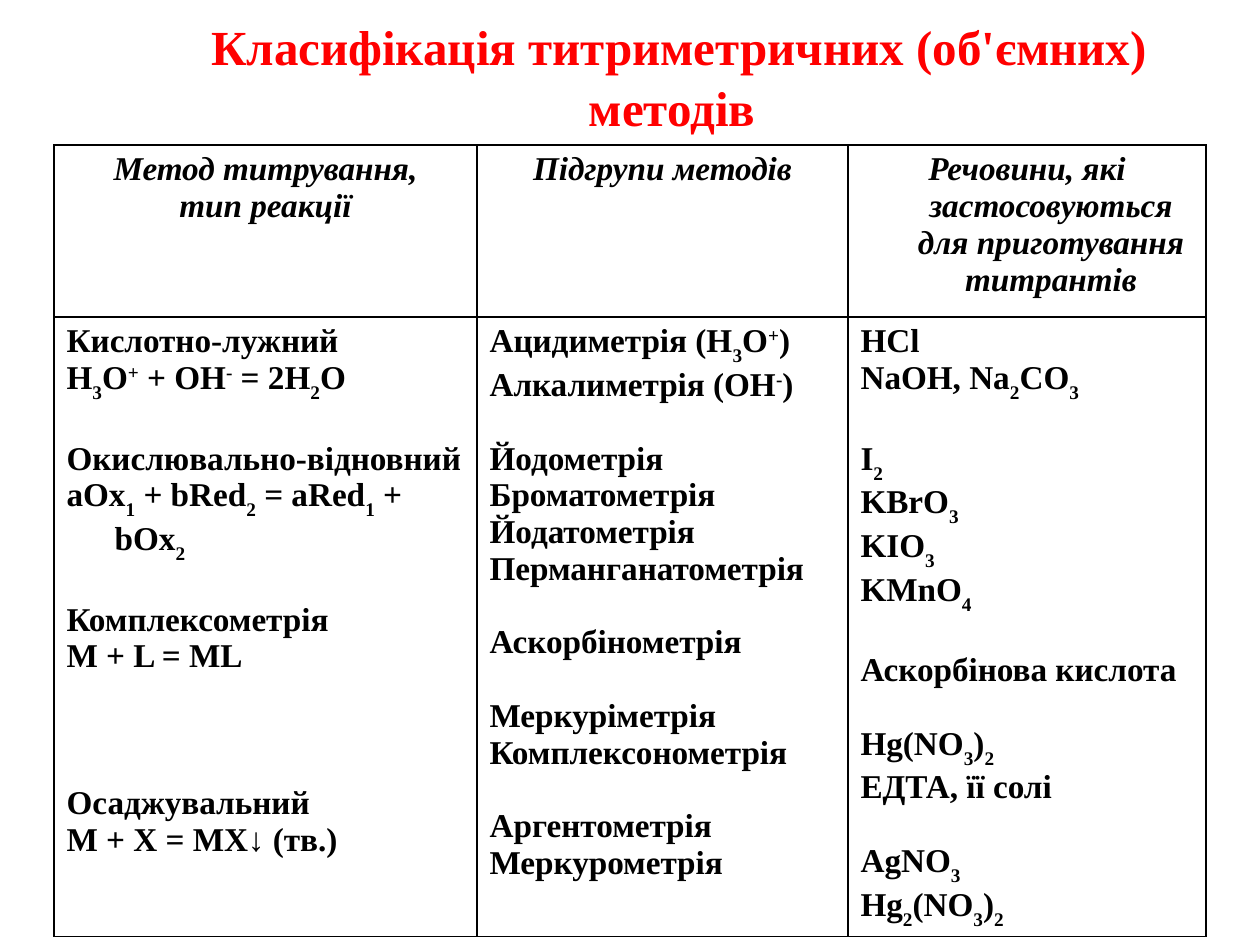
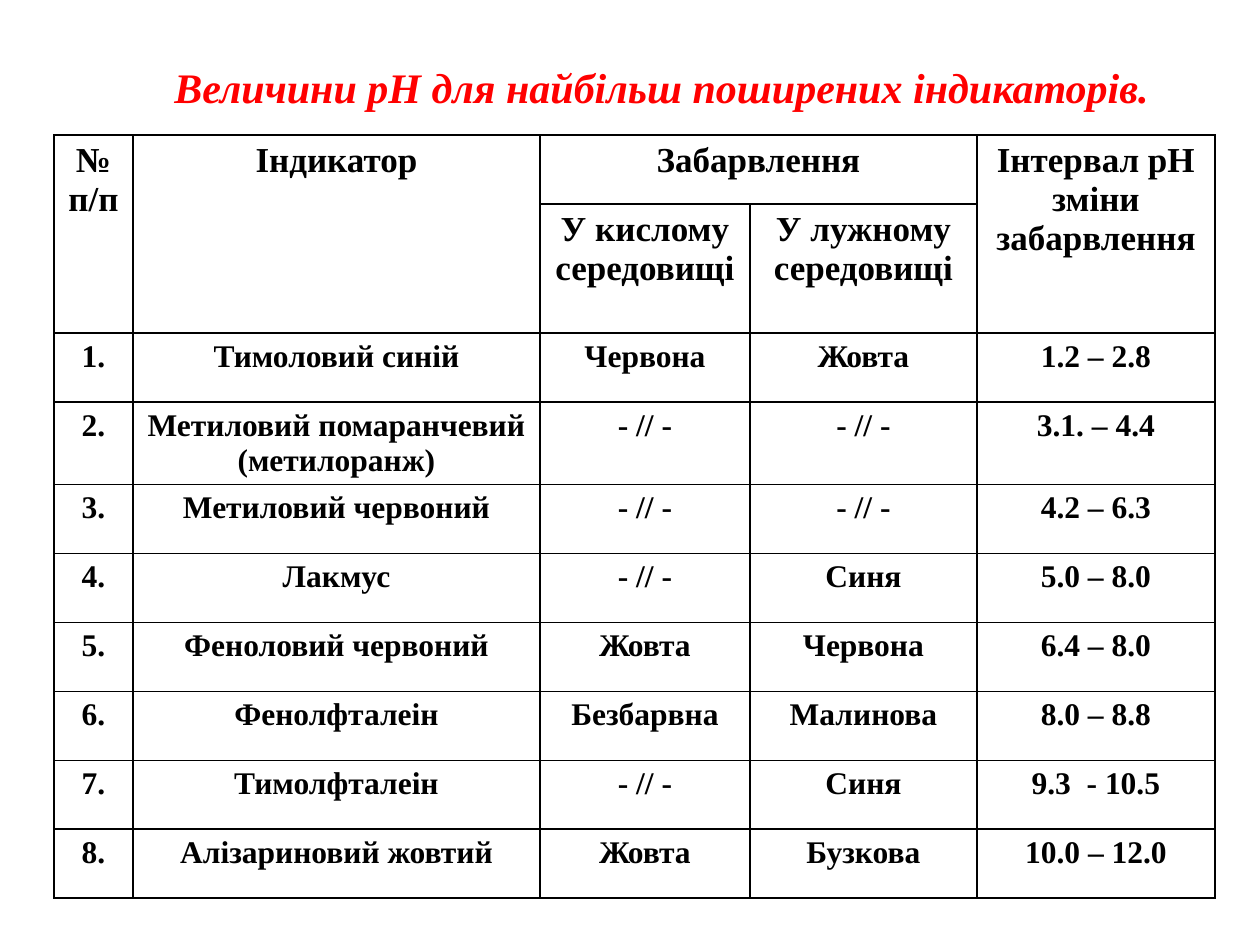
"""Build two slides on titrimetric methods and pH indicators."""
from lxml import etree
from pptx import Presentation
from pptx.dml.color import RGBColor
from pptx.enum.text import MSO_ANCHOR, MSO_AUTO_SIZE, PP_ALIGN
from pptx.oxml.ns import qn
from pptx.util import Pt

MIDDLE, FIXED = MSO_ANCHOR.MIDDLE, MSO_AUTO_SIZE.NONE
CENTER, LEFT = PP_ALIGN.CENTER, PP_ALIGN.LEFT
SCALE = 914400 / 126
FONT, RED, BLACK = "Times New Roman", "FF0000", "000000"
SHIFT = {"_": "-30000", "^": "30000"}
EDGES = ("a:lnL", "a:lnR", "a:lnT", "a:lnB")
HANG, GAP = 48, 21


def px(n):
    return round(n * SCALE)


def add_run(para, text, size, color=BLACK, italic=False):
    run = para.add_run()
    run.text = text
    font = run.font
    font.name, font.size, font.bold, font.italic = FONT, Pt(size), True, italic
    font.color.rgb = RGBColor.from_string(color)
    return run


METHODS = [
    [["Метод титрування,", "тип реакції"],
     ["Підгрупи методів"],
     ["Речовини, які застосовуються для приготування титрантів"]],
    [["Кислотно-лужний", "H_3O^+ + OH^- = 2H_2O",
      "/Окислювально-відновний", "аOx_1 + bRed_2 = aRed_1 + bOx_2",
      "/Комплексометрія", "M + L = ML",
      "///Осаджувальний", "M + X = MX↓ (тв.)"],
     ["Ацидиметрія (H_3O^+)", "Алкалиметрія (ОН^-)",
      "/Йодометрія", "Броматометрія", "Йодатометрія", "Перманганатометрія",
      "/Аскорбінометрія", "/Меркуріметрія", "Комплексонометрія",
      "/Аргентометрія", "Меркурометрія"],
     ["HСl", "NaOH, Na_2CO_3", "/I_2", "KBrO_3", "KIO_3", "KMnO_4",
      "/Аскорбінова кислота", "/Hg(NO_3)_2", "ЕДТА, її солі",
      "/AgNO_3", "Hg_2(NO_3)_2"]],
]
DITTO = "- // -"
DYES = [
    ("Тимоловий синій", "Червона", "Жовта", "1.2 – 2.8"),
    ("Метиловий помаранчевий (метилоранж)", DITTO, DITTO, "3.1. – 4.4"),
    ("Метиловий червоний", DITTO, DITTO, "4.2 – 6.3"),
    ("Лакмус", DITTO, "Синя", "5.0 – 8.0"),
    ("Феноловий червоний", "Жовта", "Червона", "6.4 – 8.0"),
    ("Фенолфталеін", "Безбарвна", "Малинова", "8.0 – 8.8"),
    ("Тимолфталеін", DITTO, "Синя", "9.3  - 10.5"),
    ("Алізариновий жовтий", "Жовта", "Бузкова", "10.0 – 12.0"),
]
COLORS = [
    [["№", "п/п"], ["Індикатор"], ["Забарвлення"], [],
     ["Інтервал рН", "зміни забарвлення"]],
    [[], [], ["У кислому середовищі"], ["У лужному середовищі"], []],
]
for num, dye in enumerate(DYES, 1):
    COLORS.append([[f"{num}."]] + [[text] for text in dye])

SLIDES = [
    dict(title=[(" ", 32), ("Класифікація титриметричних (об'ємних) методів", 28)],
         slant=False, box=(105, 0, 1134, 146), top=145,
         cols=(423, 371, 358), rows=(172, 611), cells=METHODS, spans=[],
         heads=1, sizes=(19, 19), body=LEFT, flat={}),
    dict(title=[("Величини рН для найбільш поширених індикаторів.", 24)],
         slant=True, box=(63, 38, 1197, 97), top=135,
         cols=(79, 407, 210, 227, 238), rows=(69, 90) + (69,) * 8, cells=COLORS,
         spans=[(0, 0, 1, 0), (0, 1, 1, 1), (0, 2, 0, 3), (0, 4, 1, 4)],
         heads=2, sizes=(20, 18), body=CENTER,
         flat={(0, 4): -HANG, (1, 2): -HANG, (1, 3): -HANG, (3, 1): 0}),
]

deck = Presentation()
deck.slide_width, deck.slide_height = px(1260), px(945)
for page in SLIDES:
    slide = deck.slides.add_slide(deck.slide_layouts[5])
    title = slide.shapes.title
    title.left, title.top, title.width, title.height = map(px, page["box"])
    frame = title.text_frame
    frame.word_wrap, frame.auto_size = True, FIXED
    frame.vertical_anchor = MIDDLE
    para = frame.paragraphs[0]
    para.alignment = CENTER
    for text, size in page["title"]:
        add_run(para, text, size, RED, page["slant"])

    cols, rows = page["cols"], page["rows"]
    table = slide.shapes.add_table(
        len(rows), len(cols), px(54), px(page["top"]),
        px(sum(cols)), px(sum(rows))).table
    table.first_row = table.horz_banding = False
    for col, width in zip(table.columns, cols):
        col.width = px(width)
    for row, height in zip(table.rows, rows):
        row.height = px(height)
    for top, left, low, right in page["spans"]:
        table.cell(top, left).merge(table.cell(low, right))

    for r, line in enumerate(page["cells"]):
        head = r < page["heads"]
        size = page["sizes"][0 if head else 1]
        slant = head and page["cells"] is METHODS
        for c, texts in enumerate(line):
            cell = table.cell(r, c)
            props = cell._tc.get_or_add_tcPr()
            for edge in EDGES:
                rule = etree.SubElement(props, qn(edge), w=str(Pt(1)))
                fill = etree.SubElement(rule, qn("a:solidFill"))
                etree.SubElement(fill, qn("a:srgbClr"), val=BLACK)
            cell.fill.background()
            frame = cell.text_frame
            flat = (r, c) in page["flat"]
            for i, text in enumerate(texts):
                para = frame.add_paragraph() if i else frame.paragraphs[0]
                para.alignment = CENTER if head else page["body"]
                form = para._p.get_or_add_pPr()
                form.set("marL", str(0 if flat else px(HANG)))
                form.set("indent", str(px(page["flat"].get((r, c), -HANG))))
                label = text.lstrip("/")
                para.space_before = Pt(GAP * (len(text) - len(label)))
                marked = label.replace("_", "|_").replace("^", "|^")
                for part in marked.split("|"):
                    if part[0] in SHIFT:
                        run = add_run(para, part[1], size, BLACK, slant)
                        run._r.get_or_add_rPr().set("baseline", SHIFT[part[0]])
                        part = part[2:]
                    if part:
                        add_run(para, part, size, BLACK, slant)

deck.save("out.pptx")
